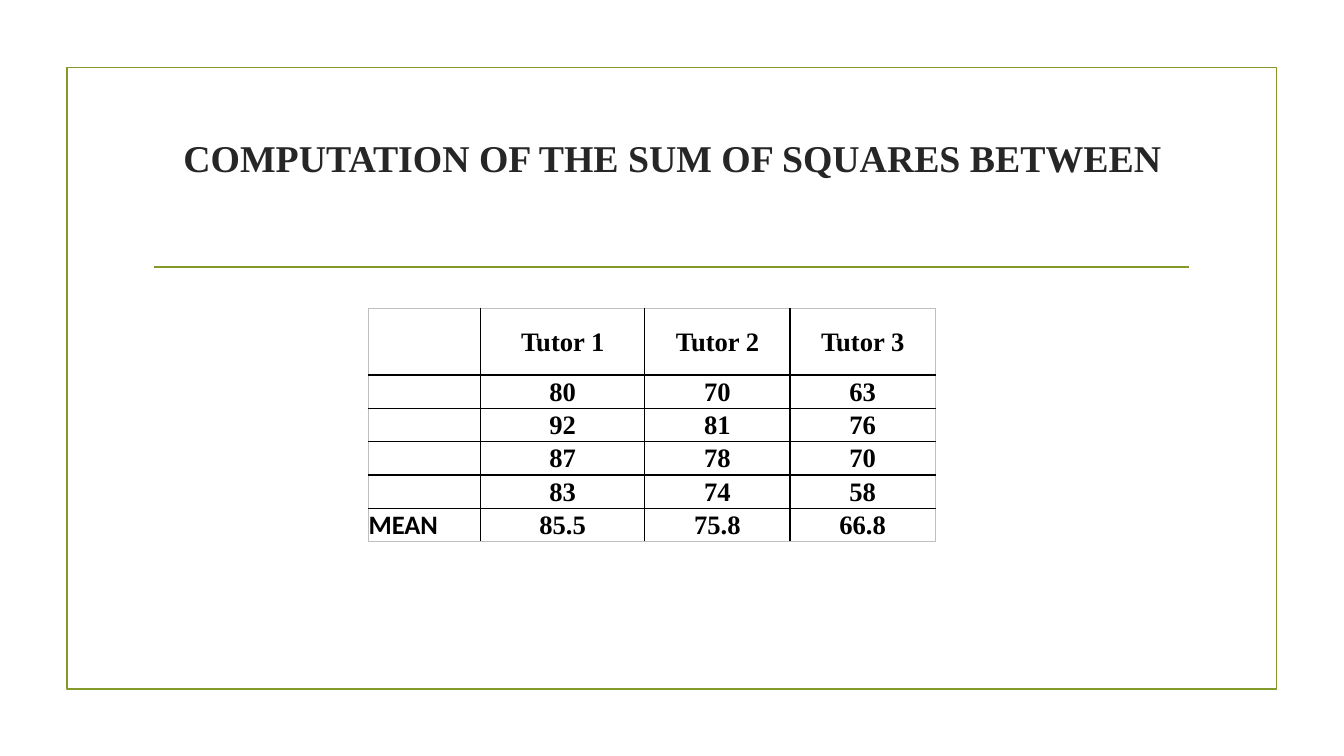
from dataclasses import dataclass

from lxml.etree import SubElement
from pptx import Presentation
from pptx.dml.color import RGBColor
from pptx.enum.shapes import MSO_CONNECTOR, MSO_SHAPE
from pptx.enum.text import MSO_ANCHOR, PP_ALIGN
from pptx.oxml.ns import qn
from pptx.util import Cm, Pt


@dataclass(frozen=True)
class Theme:
    """Colours, fonts and sizes of the slide."""
    accent: str = "83992A"
    title_color: str = "262626"
    ink: str = "000000"
    edge: str = "BFBFBF"
    serif: str = "Times New Roman"
    sans: str = "Calibri"
    title_size: float = 27
    table_size: float = 19
    line_width: float = 1.25
    grid_width: float = 1
    edge_width: float = 0.5


THEME = Theme()
COLUMN_WIDTHS = (2.84, 4.14, 3.66, 3.66)
ROW_HEIGHTS = (1.68,) + (0.84,) * 5
SCORES = (
    ("", "Tutor 1", "Tutor 2", "Tutor 3"),
    ("", "80", "70", "63"),
    ("", "92", "81", "76"),
    ("", "87", "78", "70"),
    ("", "83", "74", "58"),
    ("MEAN", "85.5", "75.8", "66.8"),
)


def add_span(para, text, font_name, size, color):
    """Add one bold run to a paragraph."""
    span = para.add_run()
    span.text = text
    span.font.name = font_name
    span.font.size = Pt(size)
    span.font.bold = True
    span.font.color.rgb = RGBColor.from_string(color)


def style_line(line):
    """Give a line the accent colour and width."""
    line.color.rgb = RGBColor.from_string(THEME.accent)
    line.width = Pt(THEME.line_width)


def add_frame(page, left, top, width, height):
    """Draw the outlined frame and the rule under the title."""
    frame = page.shapes.add_shape(
        MSO_SHAPE.RECTANGLE, Cm(left), Cm(top), Cm(width), Cm(height))
    frame.shadow.inherit = False
    frame.fill.background()
    style_line(frame.line)
    margin, drop = 2.2, 5.03
    rule = page.shapes.add_connector(
        MSO_CONNECTOR.STRAIGHT, Cm(left + margin), Cm(top + drop),
        Cm(left + width - margin), Cm(top + drop))
    style_line(rule.line)
    SubElement(rule._element.spPr, qn("a:effectLst"))


def add_title(page, left, top, width, height):
    """Place the centred title, which ends in a line break."""
    box = page.shapes.add_textbox(Cm(left), Cm(top), Cm(width), Cm(height))
    box.text_frame.word_wrap = True
    box.text_frame.vertical_anchor = MSO_ANCHOR.MIDDLE
    para = box.text_frame.paragraphs[0]
    para.alignment = PP_ALIGN.CENTER
    para.font.size = Pt(THEME.title_size)
    add_span(para, "COMPUTATION OF THE SUM OF SQUARES BETWEEN",
             THEME.serif, THEME.title_size, THEME.title_color)
    para.add_line_break()
    SubElement(para._p, qn("a:endParaRPr"), sz=str(int(THEME.title_size * 100)))


def set_borders(cell, outer_sides):
    """Draw black grid lines, with a pale line on the outer sides."""
    properties = cell._tc.get_or_add_tcPr()
    for side in ("L", "R", "T", "B"):
        outer = side in outer_sides
        width = THEME.edge_width if outer else THEME.grid_width
        line = SubElement(properties, qn(f"a:ln{side}"), w=str(Pt(width)))
        fill = SubElement(line, qn("a:solidFill"))
        SubElement(fill, qn("a:srgbClr"), val=THEME.edge if outer else THEME.ink)


def fill_cell(cell, text, is_label):
    """Write one table cell, as a row label or as a centred value."""
    cell.margin_left = cell.margin_right = cell.margin_top = Cm(0.02)
    cell.margin_bottom = 0
    cell.vertical_anchor = MSO_ANCHOR.BOTTOM if is_label else MSO_ANCHOR.MIDDLE
    para = cell.text_frame.paragraphs[0]
    para.alignment = PP_ALIGN.LEFT if is_label else PP_ALIGN.CENTER
    if text:
        add_span(para, text, THEME.sans if is_label else THEME.serif,
                 THEME.table_size, THEME.ink)


def add_scores(page, left, top):
    """Place the table of tutor scores and means."""
    table = page.shapes.add_table(
        len(ROW_HEIGHTS), len(COLUMN_WIDTHS), Cm(left), Cm(top),
        Cm(sum(COLUMN_WIDTHS)), Cm(sum(ROW_HEIGHTS))).table
    table.first_row = False
    table.horz_banding = False
    for column, width in zip(table.columns, COLUMN_WIDTHS):
        column.width = Cm(width)
    for row, height in zip(table.rows, ROW_HEIGHTS):
        row.height = Cm(height)
    last_row, last_column = len(ROW_HEIGHTS) - 1, len(COLUMN_WIDTHS) - 1
    for row_index, values in enumerate(SCORES):
        for column_index, text in enumerate(values):
            cell = table.cell(row_index, column_index)
            fill_cell(cell, text, column_index == 0)
            edges = {"L": column_index == 0, "R": column_index == last_column,
                     "T": row_index == 0, "B": row_index == last_row}
            set_borders(cell, [side for side, outer in edges.items() if outer])
            cell.fill.background()


def main():
    """Build the slide and save the deck."""
    deck = Presentation()
    deck.slide_width, deck.slide_height = Cm(33.87), Cm(19.05)
    page = deck.slides.add_slide(deck.slide_layouts[6])
    add_frame(page, 1.69, 1.7, 30.48, 15.67)
    add_title(page, 3.61, 2.72, 26.67, 3.63)
    add_scores(page, 9.27, 7.77)
    deck.save("out.pptx")


if __name__ == "__main__":
    main()
